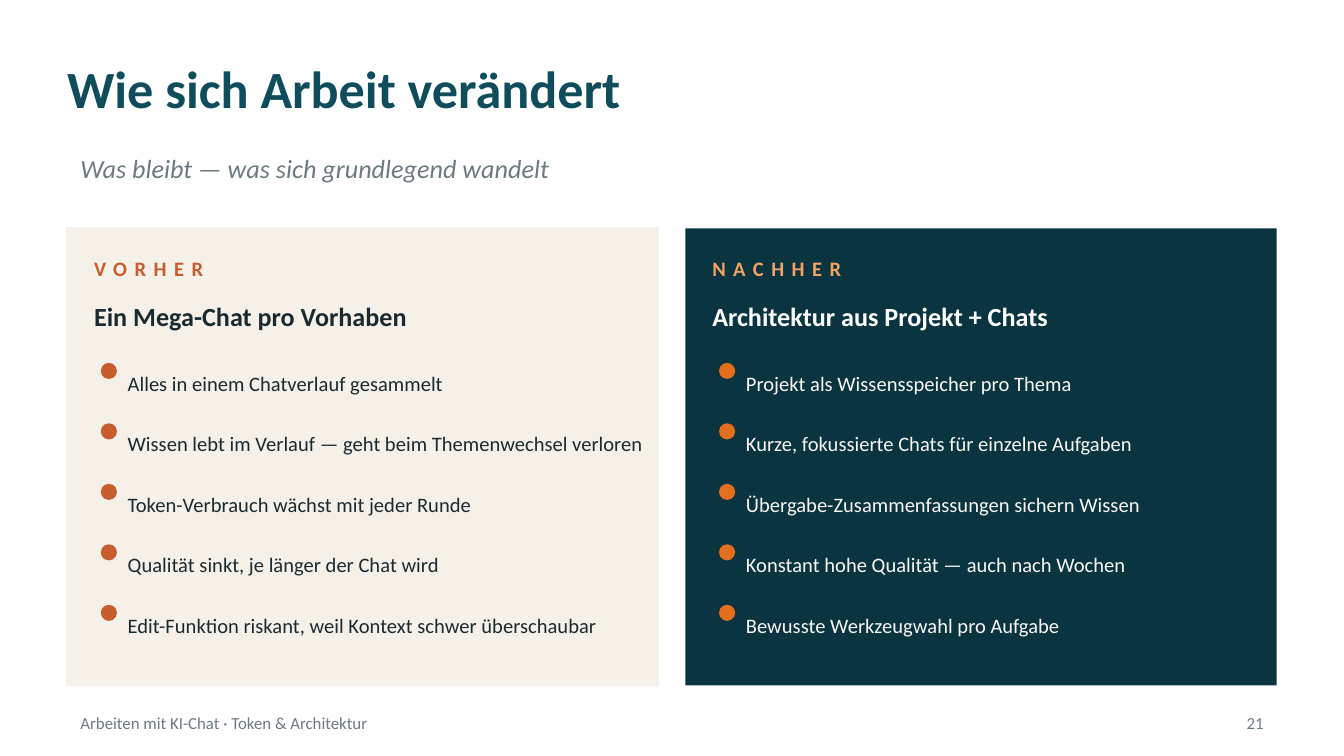
import pptx
import pptx.util
import pptx.dml.color
import pptx.enum.shapes
import pptx.enum.text
from dataclasses import dataclass
from typing import NamedTuple, Optional

SHAPES = pptx.enum.shapes.MSO_SHAPE
ALIGN = pptx.enum.text.PP_ALIGN
SLIDE_WIDTH = 10  # inches
SLIDE_HEIGHT = SLIDE_WIDTH * 9 / 16
GRID = 0.05  # inches per grid column and row; all boxes are in grid steps


@dataclass(frozen=True)
class Theme:
    font: str = "Calibri"
    background: str = "FFFFFF"
    title: str = "0F4C5C"
    muted: str = "6B7B80"
    title_size: int = 28
    heading_size: int = 14
    body_size: int = 11
    footer_size: int = 9
    label_spacing: int = 400  # hundredths of a point


@dataclass(frozen=True)
class PanelColours:
    fill: str
    label: str
    heading: str
    bullet: str
    body: str
    border: Optional[str] = None


class Box(NamedTuple):
    left: float
    top: float
    width: float
    height: float

    def inner(self, left, top, width, height):
        """Box placed relative to this box's top left corner."""
        return Box(self.left + left, self.top + top, width, height)

    def lengths(self):
        return [pptx.util.Inches(round(steps * GRID, 2)) for steps in self]


THEME = Theme()
BEFORE = PanelColours("F5F0E8", "C75D2C", "1A2B30", "C75D2C", "1A2B30", border="F5F0E8")
AFTER = PanelColours("0A3540", "F4A261", "FFFFFF", "E36F1E", "FAF6F1")


def rgb(value):
    return pptx.dml.color.RGBColor.from_string(value)


def add_text(slide, box, text, size, colour, bold=False, italic=False,
             align=ALIGN.LEFT, inset=False, spacing=None):
    shape = slide.shapes.add_textbox(*box.lengths())
    frame = shape.text_frame
    frame.word_wrap = True
    frame.vertical_anchor = pptx.enum.text.MSO_ANCHOR.MIDDLE
    if not inset:
        frame.margin_left = frame.margin_right = 0
        frame.margin_top = frame.margin_bottom = 0
    paragraph = frame.paragraphs[0]
    paragraph.alignment = align
    run = paragraph.add_run()
    run.text = text
    if spacing:
        run.font._element.set("spc", str(spacing))
    font = paragraph.font
    font.name, font.size = THEME.font, pptx.util.Pt(size)
    font.bold, font.italic = bold, italic
    font.color.rgb = rgb(colour)


def add_filled_shape(slide, kind, box, fill, border=None):
    shape = slide.shapes.add_shape(kind, *box.lengths())
    shape.shadow.inherit = False
    shape.fill.solid()
    shape.fill.fore_color.rgb = rgb(fill)
    if border:
        shape.line.color.rgb = rgb(border)
        shape.line.width = pptx.util.Pt(1)
    else:
        shape.line.fill.background()


def add_header(slide, box, title, subtitle):
    add_text(slide, box.inner(0, 0, box.width, 14), title,
             THEME.title_size, THEME.title, bold=True)
    add_text(slide, box.inner(0, 15, box.width, 8), subtitle,
             THEME.heading_size, THEME.muted, italic=True, inset=True)


def add_panel(slide, box, colours, label, heading, points):
    add_filled_shape(slide, SHAPES.RECTANGLE, box, colours.fill, colours.border)

    # Label and heading
    text_width = box.width - 8
    add_text(slide, box.inner(4, 3, text_width, 6), label, THEME.body_size,
             colours.label, bold=True, spacing=THEME.label_spacing)
    add_text(slide, box.inner(4, 9, text_width, 8), heading, THEME.heading_size,
             colours.heading, bold=True)

    # Points, each with a dot
    first_row, row_step, dot = 19, 9, 2.4
    for index, point in enumerate(points):
        row = first_row + index * row_step
        add_filled_shape(slide, SHAPES.OVAL, box.inner(5, row + 1, dot, dot),
                         colours.bullet)
        add_text(slide, box.inner(9, row, box.width - 11, 8), point,
                 THEME.body_size, colours.body)


def add_footer(slide, box, text, number):
    number_width = 10
    add_text(slide, box.inner(0, 0, 120, box.height), text,
             THEME.footer_size, THEME.muted, inset=True)
    add_text(slide, box.inner(box.width - number_width, 0, number_width, box.height),
             number, THEME.footer_size, THEME.muted, align=ALIGN.RIGHT, inset=True)


def main():
    presentation = pptx.Presentation()
    presentation.slide_width = pptx.util.Inches(SLIDE_WIDTH)
    presentation.slide_height = pptx.util.Inches(SLIDE_HEIGHT)
    slide = presentation.slides.add_slide(presentation.slide_layouts[6])
    slide.background.fill.solid()
    slide.background.fill.fore_color.rgb = rgb(THEME.background)

    margin, gap = 10, 4
    content_width = SLIDE_WIDTH / GRID - 2 * margin
    panel_width = (content_width - gap) / 2

    # Header
    add_header(slide, Box(margin, 6, content_width, 23),
               "Wie sich Arbeit verändert",
               "Was bleibt — was sich grundlegend wandelt")

    # Before and after panels
    panels = [
        (BEFORE, "VORHER", "Ein Mega-Chat pro Vorhaben", [
            "Alles in einem Chatverlauf gesammelt",
            "Wissen lebt im Verlauf — geht beim Themenwechsel verloren",
            "Token-Verbrauch wächst mit jeder Runde",
            "Qualität sinkt, je länger der Chat wird",
            "Edit-Funktion riskant, weil Kontext schwer überschaubar",
        ]),
        (AFTER, "NACHHER", "Architektur aus Projekt + Chats", [
            "Projekt als Wissensspeicher pro Thema",
            "Kurze, fokussierte Chats für einzelne Aufgaben",
            "Übergabe-Zusammenfassungen sichern Wissen",
            "Konstant hohe Qualität — auch nach Wochen",
            "Bewusste Werkzeugwahl pro Aufgabe",
        ]),
    ]
    for index, panel in enumerate(panels):
        left = margin + index * (panel_width + gap)
        add_panel(slide, Box(left, 34, panel_width, 68), *panel)

    # Footer
    add_footer(slide, Box(margin, 105, content_width, 5),
               "Arbeiten mit KI-Chat · Token & Architektur", "21")

    presentation.save("out.pptx")


if __name__ == "__main__":
    main()
